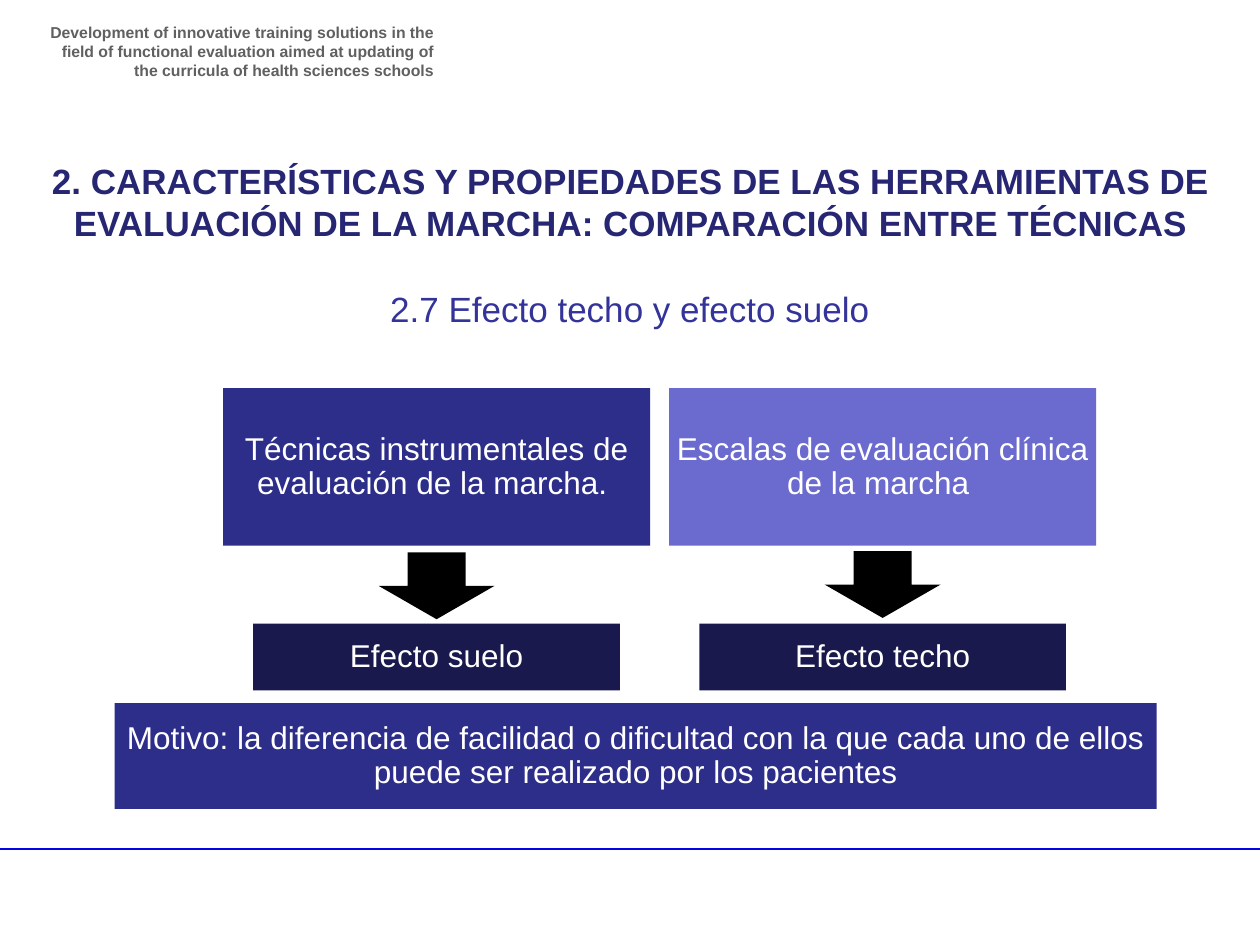
from dataclasses import dataclass

from lxml import etree
from pptx import Presentation
from pptx.dml.color import RGBColor
from pptx.enum.shapes import MSO_CONNECTOR, MSO_SHAPE
from pptx.enum.text import MSO_ANCHOR, PP_ALIGN
from pptx.oxml.ns import qn
from pptx.util import Inches, Pt

RECTANGLE = MSO_SHAPE.RECTANGLE
ARROW = MSO_SHAPE.RIGHT_ARROW
STRAIGHT = MSO_CONNECTOR.STRAIGHT
MIDDLE = MSO_ANCHOR.MIDDLE
CENTER = PP_ALIGN.CENTER
RIGHT = PP_ALIGN.RIGHT


@dataclass(frozen=True)
class Theme:
    """Colours, font and type sizes of the slide."""
    font: str = "Arial"
    header: str = "606060"
    title: str = "262673"
    subtitle: str = "333399"
    navy: str = "2D2D8A"
    violet: str = "6B6BCF"
    midnight: str = "19194D"
    arrow: str = "000000"
    rule: str = "0404E6"
    white: str = "FFFFFF"
    header_size: int = 9
    heading_size: int = 20
    block_size: int = 18


THEME = Theme()


def write(box, text, size, color, align=CENTER, bold=False):
    """Put one styled run in the first paragraph of a box and return the paragraph."""
    box.text_frame.word_wrap = True
    para = box.text_frame.paragraphs[0]
    para.alignment = align
    span = para.add_run()
    span.text = text
    span.font.name = THEME.font
    span.font.size = Pt(size)
    span.font.bold = bold
    span.font.color.rgb = RGBColor.from_string(color)
    return para


def add_text(page, area, text, size, color, align=CENTER, bold=False):
    """Add a plain text box."""
    box = page.shapes.add_textbox(*map(Inches, area))
    write(box, text, size, color, align, bold)


def add_solid(page, kind, area, fill):
    """Add a filled shape with no outline or shadow."""
    shape = page.shapes.add_shape(kind, *map(Inches, area))
    shape.shadow.inherit = False
    shape.fill.solid()
    shape.fill.fore_color.rgb = RGBColor.from_string(fill)
    shape.line.fill.background()
    return shape


def add_block(page, area, text, fill):
    """Add a coloured block with centred white text."""
    box = add_solid(page, RECTANGLE, area, fill)
    frame = box.text_frame
    frame.vertical_anchor = MIDDLE
    frame.margin_left = frame.margin_right = Inches(0.01)
    frame.margin_top = frame.margin_bottom = Inches(0.01)
    para = write(box, text, THEME.block_size, THEME.white)
    para.line_spacing = 0.9


def add_column(page, left, technique, fill, arrow_top, effect):
    """Add a technique, the arrow below it and the effect it leads to."""
    width, effect_width = 3.39, 2.91
    arrow_length, arrow_width = 0.53, 0.92
    center = left + width / 2
    add_block(page, (left, 3.08, width, 1.25), technique, fill)
    arrow_area = (center - arrow_length / 2, arrow_top, arrow_length, arrow_width)
    arrow = add_solid(page, ARROW, arrow_area, THEME.arrow)
    arrow.rotation = 90
    effect_area = (center - effect_width / 2, 4.95, effect_width, 0.53)
    add_block(page, effect_area, effect, THEME.midnight)


def add_rule(page, top):
    """Add the footer rule across the slide."""
    rule = page.shapes.add_connector(
        STRAIGHT, Inches(0), Inches(top), Inches(10), Inches(top))
    rule.line.width = Pt(1)
    rule.line.color.rgb = RGBColor.from_string(THEME.rule)
    etree.SubElement(rule._element.spPr, qn("a:effectLst"))


def main():
    """Build and save the slide."""
    deck = Presentation()
    deck.slide_width, deck.slide_height = Inches(10), Inches(7.5)
    page = deck.slides.add_slide(deck.slide_layouts[6])
    add_rule(page, 6.74)
    add_text(page, (0.28, 0.13, 3.26, 0.47),
             "Development of innovative training solutions in the ﬁeld of functional "
             "evaluation aimed at updating of the curricula of health sciences schools",
             THEME.header_size, THEME.header, RIGHT, bold=True)
    add_column(page, 1.77, "Técnicas instrumentales de evaluación de la marcha. ",
               THEME.navy, 4.19, "Efecto suelo")
    add_column(page, 5.31, "Escalas de evaluación clínica de la marcha ",
               THEME.violet, 4.18, "Efecto techo")
    add_block(page, (0.91, 5.58, 8.27, 0.84),
              "Motivo: la diferencia de facilidad o dificultad con la que cada uno "
              "de ellos puede ser realizado por los pacientes", THEME.navy)
    add_text(page, (0.28, 1.22, 9.45, 0.77),
             "2. CARACTERÍSTICAS Y PROPIEDADES DE LAS HERRAMIENTAS DE "
             "EVALUACIÓN DE LA MARCHA: COMPARACIÓN ENTRE TÉCNICAS",
             THEME.heading_size, THEME.title, bold=True)
    add_text(page, (1.38, 2.23, 7.24, 0.44), "2.7 Efecto techo y efecto suelo",
             THEME.heading_size, THEME.subtitle)
    deck.save("out.pptx")


if __name__ == "__main__":
    main()
